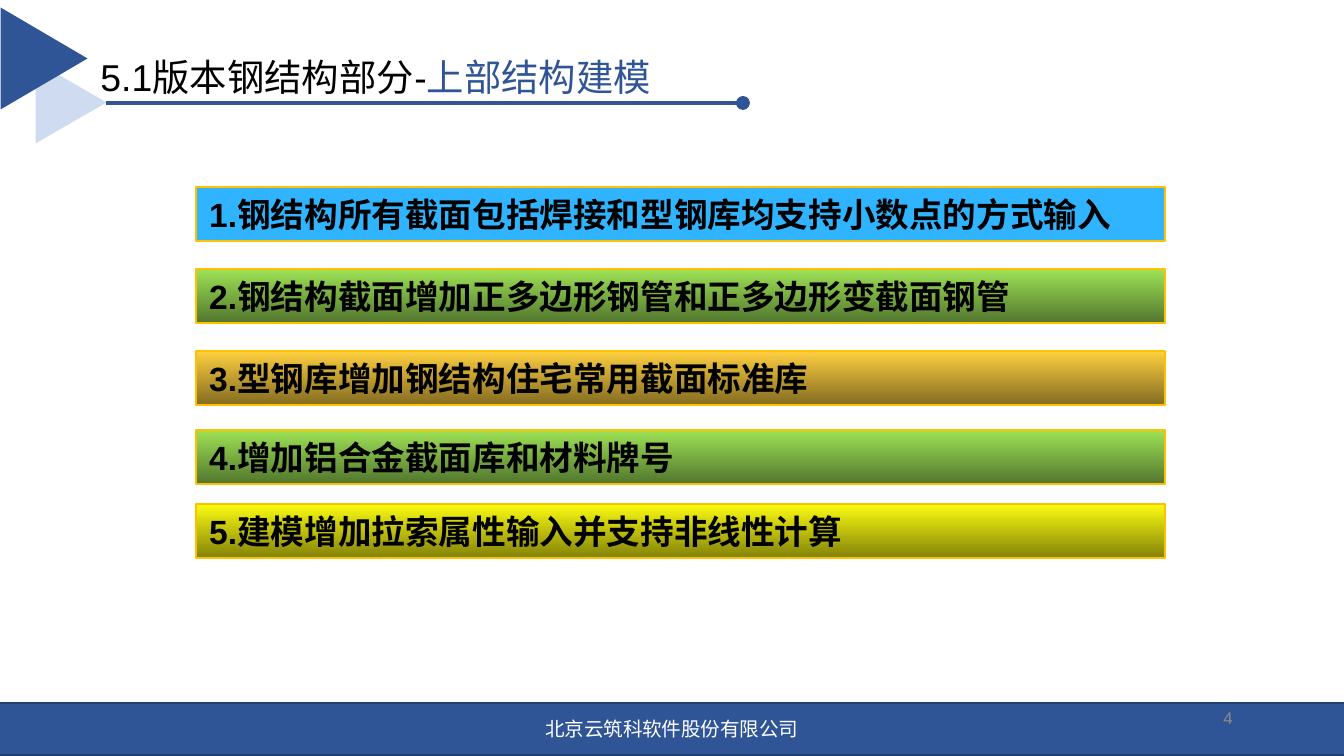
import pptx
import pptx.util
from lxml import etree
from pptx.dml.color import RGBColor
from pptx.enum.shapes import MSO_CONNECTOR, MSO_SHAPE
from pptx.enum.text import MSO_ANCHOR, MSO_AUTO_SIZE, PP_ALIGN
from pptx.oxml.ns import qn

# Colours
BLACK = RGBColor(0x00, 0x00, 0x00)
WHITE = RGBColor(0xFF, 0xFF, 0xFF)
GRAY = RGBColor(0x8C, 0x8C, 0x8C)
NAVY = RGBColor(0x2F, 0x55, 0x97)
DARK_NAVY = RGBColor(0x23, 0x3F, 0x70)
PALE_BLUE = RGBColor(0xCF, 0xDB, 0xF0)
SKY = RGBColor(0x31, 0xB4, 0xFF)
GOLD = RGBColor(0xFF, 0xC0, 0x00)
GREEN_FADE = (RGBColor(0x9E, 0xE2, 0x56), RGBColor(0x52, 0x76, 0x2D))
ORANGE_FADE = (RGBColor(0xFE, 0xCF, 0x40), RGBColor(0x84, 0x6C, 0x21))
YELLOW_FADE = (RGBColor(0xFB, 0xFB, 0x11), RGBColor(0x83, 0x83, 0x09))

# Content
TITLE = [("5.1版本钢结构部分-", BLACK), ("上部结构建模", NAVY)]
FOOTER = "北京云筑科软件股份有限公司"
PAGE_NUMBER = "4"
BARS = [  # text, fill colours, top
    ("钢结构所有截面包括焊接和型钢库均支持小数点的方式输入", (SKY,), 187),
    ("钢结构截面增加正多边形钢管和正多边形变截面钢管", GREEN_FADE, 269),
    ("型钢库增加钢结构住宅常用截面标准库", ORANGE_FADE, 351),
    ("增加铝合金截面库和材料牌号", GREEN_FADE, 430),
    ("建模增加拉索属性输入并支持非线性计算", YELLOW_FADE, 504),
]
BAR_LEFT, BAR_WIDTH, BAR_HEIGHT = 196, 969, 54
TRIANGLES = [((30, 67, 82, 71), PALE_BLUE), ((-7, 15, 102, 87), NAVY)]

PX_PER_INCH = 134.4


def px(length):
    return pptx.util.Emu(round(length * 914400 / PX_PER_INCH))


def write(shape, runs, size, color=BLACK, bold=False,
          align=PP_ALIGN.LEFT, anchor=MSO_ANCHOR.MIDDLE):
    """Put text, or a list of (text, color) runs, into a shape."""
    frame = shape.text_frame
    frame.word_wrap = True
    frame.auto_size = MSO_AUTO_SIZE.NONE
    frame.vertical_anchor = anchor
    paragraph = frame.paragraphs[0]
    paragraph.alignment = align
    for text, run_color in [(runs, color)] if isinstance(runs, str) else runs:
        run = paragraph.add_run()
        run.text = text
        run.font.name = "Arial"
        run.font.size = pptx.util.Pt(size)
        run.font.bold = bold
        run.font.color.rgb = run_color


def add_box(slide, kind, box, colors, line=None, line_width=1):
    """Add a shape with a plain fill, or a top-to-bottom fade for two colours."""
    shape = slide.shapes.add_shape(kind, *map(px, box))
    shape.shadow.inherit = False
    if len(colors) == 1:
        shape.fill.solid()
        shape.fill.fore_color.rgb = colors[0]
    else:
        shape.fill.gradient()
        shape.fill.gradient_angle = 270
        for stop, color in zip(shape.fill.gradient_stops, colors):
            stop.color.rgb = color
    if line is None:
        shape.line.fill.background()
    else:
        shape.line.color.rgb = line
        shape.line.width = pptx.util.Pt(line_width)
    return shape


def main():
    presentation = pptx.Presentation()
    presentation.slide_width, presentation.slide_height = px(1344), px(756)
    slide = presentation.slides.add_slide(presentation.slide_layouts[5])

    # Footer band and page number
    footer = add_box(slide, MSO_SHAPE.RECTANGLE, (-1, 703, 1346, 52), (NAVY,), DARK_NAVY)
    write(footer, FOOTER, 10.5, WHITE, align=PP_ALIGN.CENTER)
    number = slide.shapes.add_textbox(*map(px, (949, 700, 297, 35)))
    write(number, PAGE_NUMBER, 9, GRAY, align=PP_ALIGN.RIGHT)

    # Title
    title = slide.shapes.title
    title.left, title.top, title.width, title.height = map(px, (87, 40, 1044, 66))
    write(title, TITLE, 20, anchor=MSO_ANCHOR.BOTTOM)

    # Corner triangles
    for box, color in TRIANGLES:
        triangle = add_box(slide, MSO_SHAPE.ISOSCELES_TRIANGLE, box, (color,))
        triangle.rotation = 90

    # Title rule with a round end
    rule = slide.shapes.add_connector(
        MSO_CONNECTOR.STRAIGHT, *map(px, (106, 103, 743, 103)))
    rule.line.color.rgb = NAVY
    rule.line.width = pptx.util.Pt(2.5)
    etree.SubElement(rule.line._get_or_add_ln(), qn("a:tailEnd"), type="oval")
    etree.SubElement(rule._element.spPr, qn("a:effectLst"))

    # Numbered bars
    for index, (text, colors, top) in enumerate(BARS, start=1):
        bar = add_box(slide, MSO_SHAPE.RECTANGLE,
                      (BAR_LEFT, top, BAR_WIDTH, BAR_HEIGHT), colors, GOLD, 0.75)
        write(bar, f"{index}.{text}", 18, bold=True, anchor=MSO_ANCHOR.TOP)

    presentation.save("out.pptx")


if __name__ == "__main__":
    main()
